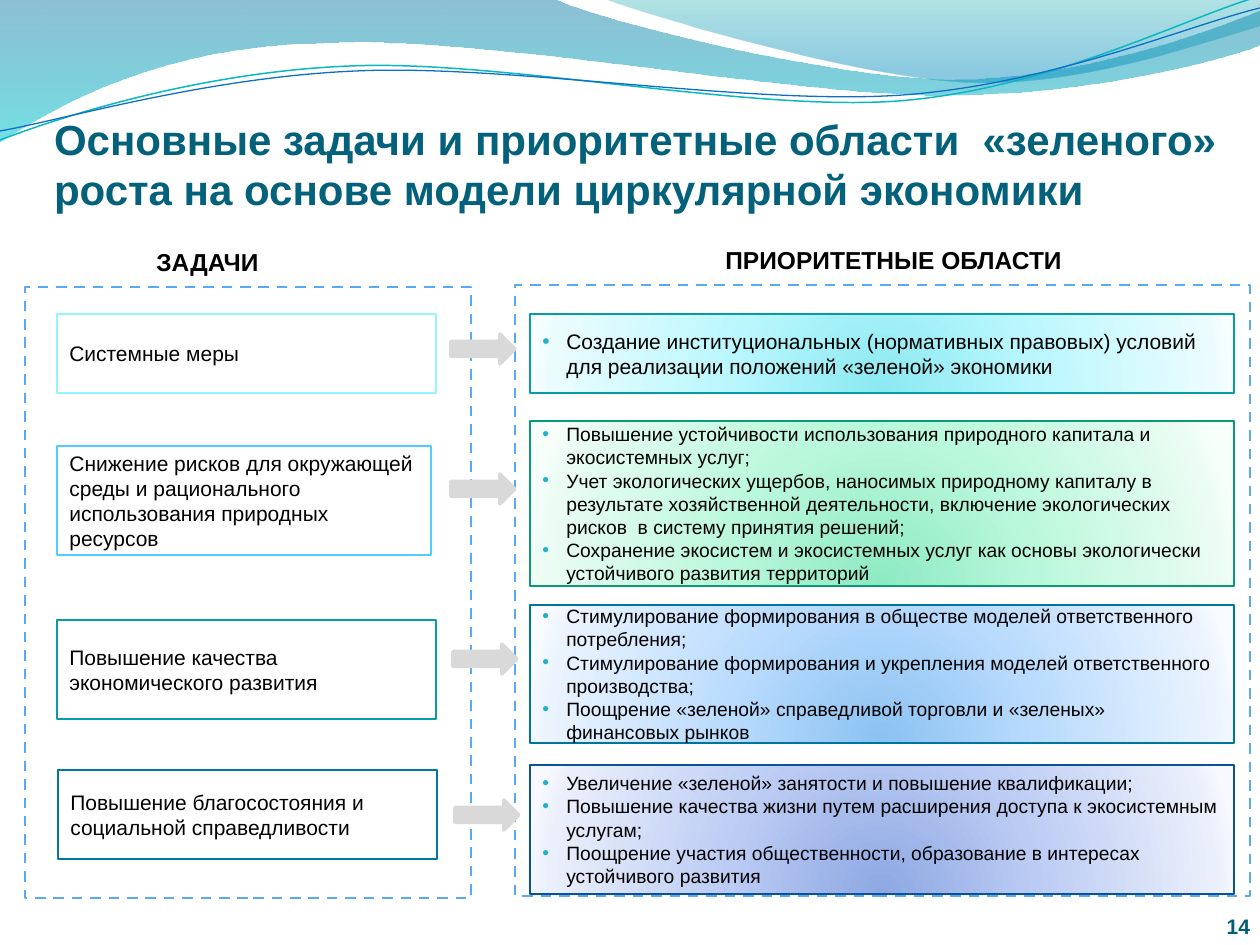
from pptx import Presentation
from pptx.dml.color import RGBColor
from pptx.enum.dml import MSO_LINE
from pptx.enum.shapes import MSO_SHAPE as SHAPE
from pptx.enum.text import MSO_ANCHOR as ANCHOR, MSO_AUTO_SIZE as AUTOSIZE, PP_ALIGN as ALIGN
from pptx.oxml import parse_xml
from pptx.oxml.ns import nsdecls, qn
from pptx.util import Inches, Pt

PX = 914400 / 126
FONT = "Arial"
BLACK = RGBColor(0x00, 0x00, 0x00)
WHITE = RGBColor(0xFF, 0xFF, 0xFF)
TITLE_TEAL = RGBColor(0x04, 0x61, 0x7B)
NUMBER_TEAL = RGBColor(0x04, 0x5D, 0x75)
PANEL_BLUE = RGBColor(0x59, 0xAA, 0xF2)
ARROW_GREY = RGBColor(0xD9, 0xD9, 0xD9)
BULLET_TEAL = RGBColor(0x21, 0xB2, 0xC9)
WAVE_TEAL = RGBColor(0x0A, 0xB8, 0xBF)
WAVE_BLUE = RGBColor(0x0F, 0x6F, 0xC6)
WAVE_SKY = RGBColor(0x00, 0x74, 0xA1)
WAVE_AQUA = RGBColor(0x00, 0xC6, 0xCF)
CREST_TEAL = RGBColor(0x00, 0xA1, 0xA9)
CREST_BLUE = RGBColor(0x00, 0x8B, 0xBF)

LINEAR_DOWN = '<a:lin ang="5400000" scaled="0"/>'
GLOW_BELOW = ('<a:path path="circle"><a:fillToRect l="50000" t="130000" '
              'r="50000" b="-30000"/></a:path>')
GLOW_STOPS = (0, 43, 93, 100)

# Wave outlines: start point, then curves of three points or single line points
BAND = [[(0, 0)], [(554, -1)], [(600, 21), (837, 79), (955, 79)],
        [(1074, 79), (1207, 33), (1260, 11)], [(1261, 45)],
        [(1239, 55), (1096, 96), (940, 95)], [(784, 95), (481, 35), (324, 43)],
        [(163, 45), (58, 105), (-1, 142)]]
CREST = [[(604, -1)], [(641, 14), (859, 78), (969, 82)],
         [(1079, 87), (1211, 40), (1260, 26)], [(1260, 0)]]
TEAL_CURVE = [[(0, 140)], [(60, 117), (199, 72), (349, 66)],
              [(498, 59), (747, 112), (898, 101)], [(1050, 89), (1182, 19), (1257, -3)]]
BLUE_CURVE = [[(0, 131)], [(59, 121), (207, 77), (357, 71)],
              [(508, 64), (752, 106), (903, 95)], [(1053, 84), (1186, 26), (1260, 8)]]

# Task: box, border colour, text
TASKS = [
    ((57, 314, 379, 79), "94F5FA", "Системные меры"),
    ((57, 446, 374, 109), "4FCEFF",
     "Снижение рисков для окружающей среды и рационального использования природных ресурсов"),
    ((57, 620, 379, 99), "089CA3", "Повышение качества экономического развития"),
    ((58, 770, 379, 89), "0076A3", "Повышение благосостояния и социальной справедливости"),
]
# Priority area: top, height, glow colours, border, text size, bullets
AREAS = [
    (314, 79, "8BE9F1 B9F7FD EAFCFE F8FEFF", "069CA3", 12,
     ["Создание институциональных (нормативных правовых) условий для реализации "
      "положений «зеленой» экономики"]),
    (421, 165, "8DEAC2 BAF8DB EAFCF3 F7FFFB", "0A9B74", 11,
     ["Повышение устойчивости использования природного капитала и экосистемных услуг;",
      "Учет экологических ущербов, наносимых природному капиталу в результате хозяйственной "
      "деятельности, включение экологических рисков  в систему принятия решений;",
      "Сохранение экосистем и экосистемных услуг как основы экологически устойчивого "
      "развития территорий"]),
    (605, 138, "8BC2F1 B9DBFD EAF3FE F8FBFF", "0074A1", 11,
     ["Стимулирование формирования в обществе моделей ответственного потребления;",
      "Стимулирование формирования и укрепления моделей ответственного производства;",
      "Поощрение «зеленой» справедливой торговли и «зеленых» финансовых рынков"]),
    (765, 129, "8DA8E3 BBCBF3 EAEFFB F7F9FF", "095295", 11,
     ["Увеличение «зеленой» занятости и повышение квалификации;",
      "Повышение качества жизни путем расширения доступа к экосистемным услугам;",
      "Поощрение участия общественности, образование в интересах устойчивого развития"]),
]
ARROWS = [(451, 334), (451, 474), (453, 644), (455, 800)]


def px(*lengths):
    return [round(length * PX) for length in lengths]


def write(shape, *paragraphs, size=12, color=BLACK, bold=False, align=ALIGN.LEFT,
          anchor=ANCHOR.MIDDLE, insets=None, wrap=True, bullets=False):
    frame = shape.text_frame
    frame.auto_size = AUTOSIZE.NONE
    frame.word_wrap = wrap
    frame.vertical_anchor = anchor
    if insets:
        (frame.margin_left, frame.margin_top,
         frame.margin_right, frame.margin_bottom) = px(*insets)
    for index, text in enumerate(paragraphs):
        para = frame.add_paragraph() if index else frame.paragraphs[0]
        para.alignment = align
        run = para.add_run()
        run.text = text
        run.font.name, run.font.size, run.font.bold = FONT, Pt(size), bold
        run.font.color.rgb = color
        if bullets:
            add_bullet(para)


def add_bullet(para):
    props = para._p.get_or_add_pPr()
    indent = Inches(0.19)
    props.set("marL", str(indent))
    props.set("indent", str(-indent))
    for tag in (f'<a:buClr {nsdecls("a")}><a:srgbClr val="{BULLET_TEAL}"/></a:buClr>',
                f'<a:buFont {nsdecls("a")} typeface="{FONT}"/>',
                f'<a:buChar {nsdecls("a")} char="•"/>'):
        props.append(parse_xml(tag))


def fill_gradient(shape, stops, direction):
    """Stops are (position %, colour) with an optional opacity %."""
    shape.fill.background()
    stop_xml = ""
    for pos, color, *opacity in stops:
        alpha = f'<a:alpha val="{opacity[0] * 1000}"/>' if opacity else ""
        stop_xml += (f'<a:gs pos="{pos * 1000}"><a:srgbClr val="{color}">{alpha}'
                     '</a:srgbClr></a:gs>')
    gradient = parse_xml(f'<a:gradFill {nsdecls("a")} rotWithShape="1">'
                         f'<a:gsLst>{stop_xml}</a:gsLst>{direction}</a:gradFill>')
    props = shape._element.spPr
    props.replace(props.find(qn("a:noFill")), gradient)


def add_box(slide, box, border, width=1.5, fill=WHITE, kind=SHAPE.RECTANGLE, dash=None):
    shape = slide.shapes.add_shape(kind, *px(*box))
    shape.shadow.inherit = False
    shape.fill.solid()
    shape.fill.fore_color.rgb = fill
    shape.line.color.rgb = border
    shape.line.width = Pt(width)
    if dash:
        shape.line.dash_style = dash
    return shape


def add_label(slide, box, text, **text_format):
    write(slide.shapes.add_textbox(*px(*box)), text, **text_format)


def bend(wave, outline):
    """Join the line points of each three-point segment into one curve."""
    lines = iter(list(wave._element.iter(qn("a:lnTo"))))
    for segment in outline[1:]:
        parts = [next(lines) for _ in segment]
        if len(parts) == 3:
            curve = parse_xml(f'<a:cubicBezTo {nsdecls("a")}/>')
            parts[0].addprevious(curve)
            for part in parts:
                curve.append(part[0])
                part.getparent().remove(part)


def add_wave(slide, outline, stops=None, color=None, width=0.75):
    start, *rest = [px(*point) for segment in outline for point in segment]
    builder = slide.shapes.build_freeform(*start)
    builder.add_line_segments(rest, close=False)
    wave = builder.convert_to_shape()
    bend(wave, outline)
    wave.shadow.inherit = False
    if stops:
        wave.line.fill.background()
        fill_gradient(wave, stops, LINEAR_DOWN)
    else:
        wave.fill.background()
        wave.line.color.rgb = color
        wave.line.width = Pt(width)


def main():
    prs = Presentation()
    prs.slide_width, prs.slide_height = px(1260, 945)
    slide = prs.slides.add_slide(prs.slide_layouts[5])

    # Wave header
    add_wave(slide, BAND, [(0, WAVE_SKY, 45), (100, WAVE_AQUA, 55)])
    add_wave(slide, CREST, [(0, CREST_TEAL, 30), (80, CREST_BLUE, 45)])
    add_wave(slide, TEAL_CURVE, color=WAVE_TEAL, width=0.85)
    add_wave(slide, BLUE_CURVE, color=WAVE_BLUE)

    # Dashed panels
    for panel in ((515, 285, 735, 611), (25, 287, 446, 611)):
        add_box(slide, panel, PANEL_BLUE, dash=MSO_LINE.DASH)

    # Title and slide number
    title = slide.shapes.title
    title.left, title.top, title.width, title.height = px(54, 125, 1168, 89)
    write(title, "Основные задачи и приоритетные области  «зеленого» роста на основе "
          "модели циркулярной экономики", size=24, color=TITLE_TEAL, bold=True,
          anchor=ANCHOR.BOTTOM, insets=(0, 6, 0, 0))
    add_label(slide, (1092, 876, 158, 63), "14", color=NUMBER_TEAL, bold=True,
              align=ALIGN.RIGHT, anchor=ANCHOR.BOTTOM, insets=(0, 0, 0, 0))

    # Panel headings
    for box, heading in (((144, 241, 129, 43), "ЗАДАЧИ"),
                         ((713, 239, 365, 43), "ПРИОРИТЕТНЫЕ ОБЛАСТИ")):
        add_label(slide, box, heading, size=14, bold=True, anchor=ANCHOR.TOP, wrap=False)

    # Tasks
    for box, border, text in TASKS:
        write(add_box(slide, box, RGBColor.from_string(border)), text)

    # Priority areas
    for top, height, glow, border, size, bullets in AREAS:
        area = add_box(slide, (530, top, 704, height), RGBColor.from_string(border), 0.75)
        fill_gradient(area, zip(GLOW_STOPS, glow.split()), GLOW_BELOW)
        write(area, *bullets, size=size, bullets=True)

    # Arrows from tasks to areas
    for left, top in ARROWS:
        add_box(slide, (left, top, 64, 30), ARROW_GREY, 2, ARROW_GREY, SHAPE.RIGHT_ARROW)

    prs.save("out.pptx")


if __name__ == "__main__":
    main()
